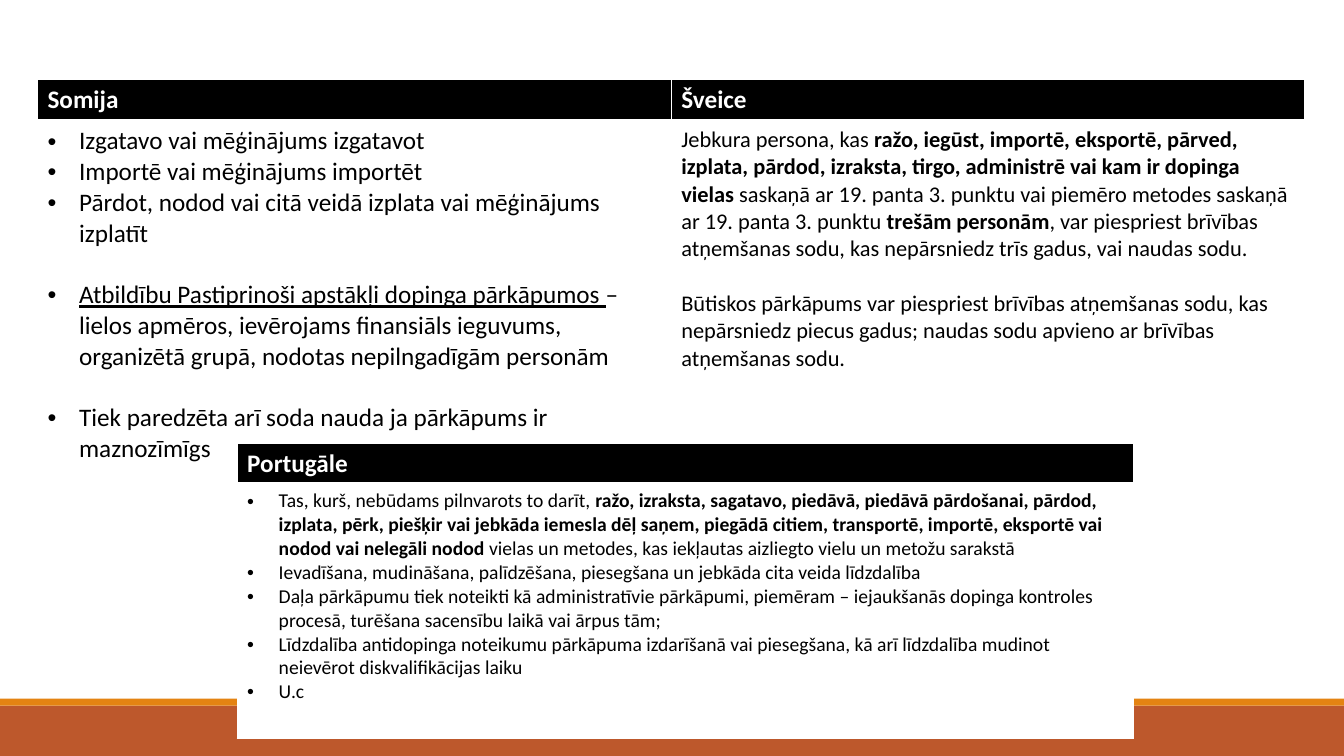
import pptx
import pptx.dml.color
import pptx.enum.shapes
import pptx.oxml.ns
import pptx.util
from lxml import etree

Pt = pptx.util.Pt
RGBColor = pptx.dml.color.RGBColor
qn = pptx.oxml.ns.qn

WHITE = RGBColor(0xFF, 0xFF, 0xFF)
BLACK = RGBColor(0x00, 0x00, 0x00)
ORANGE = RGBColor(0xE4, 0x83, 0x12)
RUST = RGBColor(0xBD, 0x58, 0x2C)
FONT = "Calibri"
PAGE_WIDTH, PAGE_HEIGHT = 960, 540
HEADER_HEIGHT = 29.5
HEADER_SIZE = 18
INDENT = Pt(22.5)

FINLAND = [
    (0, [("Izgatavo vai mēģinājums izgatavot", "")]),
    (0, [("Importē vai mēģinājums importēt", "")]),
    (0, [("Pārdot, nodod vai citā veidā izplata vai mēģinājums izplatīt", "")]),
    (22, [
        ("Atbildību Pastiprinoši apstākļi dopinga pārkāpumos ", "underline"),
        ("– lielos apmēros, ievērojams finansiāls ieguvums, organizētā grupā, "
         "nodotas nepilngadīgām personām", ""),
    ]),
    (22, [("Tiek paredzēta arī soda nauda ja pārkāpums ir maznozīmīgs", "")]),
]
SWITZERLAND = [
    (0, [
        ("Jebkura persona, kas ", ""),
        ("ražo, iegūst, importē, eksportē, pārved, izplata, pārdod, izraksta, "
         "tirgo, administrē vai kam ir dopinga vielas ", "bold"),
        ("saskaņā ar 19. panta 3. punktu vai piemēro metodes saskaņā ar "
         "19. panta 3. punktu ", ""),
        ("trešām personām", "bold"),
        (", var piespriest brīvības atņemšanas sodu, kas nepārsniedz trīs "
         "gadus, vai naudas sodu.", ""),
    ]),
    (19.5, [("Būtiskos pārkāpums var piespriest brīvības atņemšanas sodu, kas "
             "nepārsniedz piecus gadus; naudas sodu apvieno ar brīvības "
             "atņemšanas sodu.", "")]),
]
PORTUGAL = [
    (0, [
        ("Tas, kurš, nebūdams pilnvarots to darīt, ", ""),
        ("ražo, izraksta, sagatavo, piedāvā, piedāvā pārdošanai, pārdod, "
         "izplata, pērk, piešķir vai jebkāda iemesla dēļ saņem, piegādā citiem, "
         "transportē, importē, eksportē vai nodod vai nelegāli nodod ", "bold"),
        ("vielas un metodes, kas iekļautas aizliegto vielu un metožu sarakstā", ""),
    ]),
    (0, [("Ievadīšana, mudināšana, palīdzēšana, piesegšana un jebkāda cita "
          "veida līdzdalība", "")]),
    (0, [("Daļa pārkāpumu tiek noteikti kā administratīvie pārkāpumi, piemēram – "
          "iejaukšanās dopinga kontroles procesā, turēšana sacensību laikā vai "
          "ārpus tām;", "")]),
    (0, [("Līdzdalība antidopinga noteikumu pārkāpuma izdarīšanā vai piesegšana, "
          "kā arī līdzdalība mudinot neievērot diskvalifikācijas laiku", "")]),
    (0, [("U.c", "")]),
]


def add_bar(page, left, top, width, height, color):
    """Draw one plain footer bar."""
    bar = page.shapes.add_shape(
        pptx.enum.shapes.MSO_SHAPE.RECTANGLE,
        Pt(left), Pt(top), Pt(width), Pt(height))
    bar.shadow.inherit = False
    bar.fill.solid()
    bar.fill.fore_color.rgb = color
    bar.line.fill.background()


def add_footer(page, left, top, width, height):
    """Draw the two-tone band inside the given box."""
    stripe = 5
    add_bar(page, left, top + stripe, width, height - stripe, RUST)
    add_bar(page, left, top, width, stripe, ORANGE)


def style_cell(cell, color, bottom_width):
    """Give a cell white borders and a solid fill."""
    properties = cell._tc.get_or_add_tcPr()
    for side in ("lnL", "lnR", "lnT", "lnB"):
        width = bottom_width if side == "lnB" else 1
        line = etree.SubElement(properties, qn("a:" + side), w=str(Pt(width)))
        fill = etree.SubElement(line, qn("a:solidFill"))
        etree.SubElement(fill, qn("a:srgbClr"), val=str(WHITE))
    cell.fill.solid()
    cell.fill.fore_color.rgb = color


def add_bullet(para):
    """Give a paragraph a hanging round bullet."""
    properties = para._p.get_or_add_pPr()
    properties.set("marL", str(INDENT))
    properties.set("indent", str(-INDENT))
    etree.SubElement(properties, qn("a:buFont"), typeface="Arial")
    etree.SubElement(properties, qn("a:buChar"), char="•")


def format_span(span, size, color, bold=False, underline=False):
    """Set the font of one run."""
    span.font.name = FONT
    span.font.size = Pt(size)
    span.font.color.rgb = color
    span.font.bold = bold
    span.font.underline = underline


def fill_body(cell, paragraphs, size, bulleted):
    """Write the paragraphs of one body cell."""
    frame = cell.text_frame
    for index, (gap, spans) in enumerate(paragraphs):
        para = frame.add_paragraph() if index else frame.paragraphs[0]
        para.space_before = Pt(gap)
        if bulleted:
            add_bullet(para)
        for text, style in spans:
            span = para.add_run()
            span.text = text
            format_span(span, size, BLACK, style == "bold", style == "underline")


def add_country_table(page, left, top, width, height, countries):
    """Place a table with one equal column for each country."""
    table = page.shapes.add_table(
        2, len(countries), Pt(left), Pt(top), Pt(width), Pt(height)).table
    table.rows[0].height = Pt(HEADER_HEIGHT)
    table.rows[1].height = Pt(height - HEADER_HEIGHT)
    for column, (name, paragraphs, size, bulleted) in enumerate(countries):
        table.columns[column].width = Pt(width / len(countries))
        header, body = table.cell(0, column), table.cell(1, column)
        style_cell(header, BLACK, 3)
        header.text_frame.text = name
        format_span(header.text_frame.paragraphs[0].runs[0], HEADER_SIZE, WHITE, True)
        style_cell(body, WHITE, 1)
        fill_body(body, paragraphs, size, bulleted)


def main():
    """Build the slide and save the deck."""
    deck = pptx.Presentation()
    deck.slide_width, deck.slide_height = Pt(PAGE_WIDTH), Pt(PAGE_HEIGHT)
    page = deck.slides.add_slide(deck.slide_layouts[6])
    add_footer(page, 0, 499, PAGE_WIDTH, 41)
    add_country_table(page, 26.8, 56.9, 905.4, 274.3, [
        ("Somija", FINLAND, 18, True),
        ("Šveice", SWITZERLAND, 16, False),
    ])
    add_country_table(page, 169.4, 316.4, 640, 211, [
        ("Portugāle", PORTUGAL, 14, True),
    ])
    deck.save("out.pptx")


if __name__ == "__main__":
    main()
